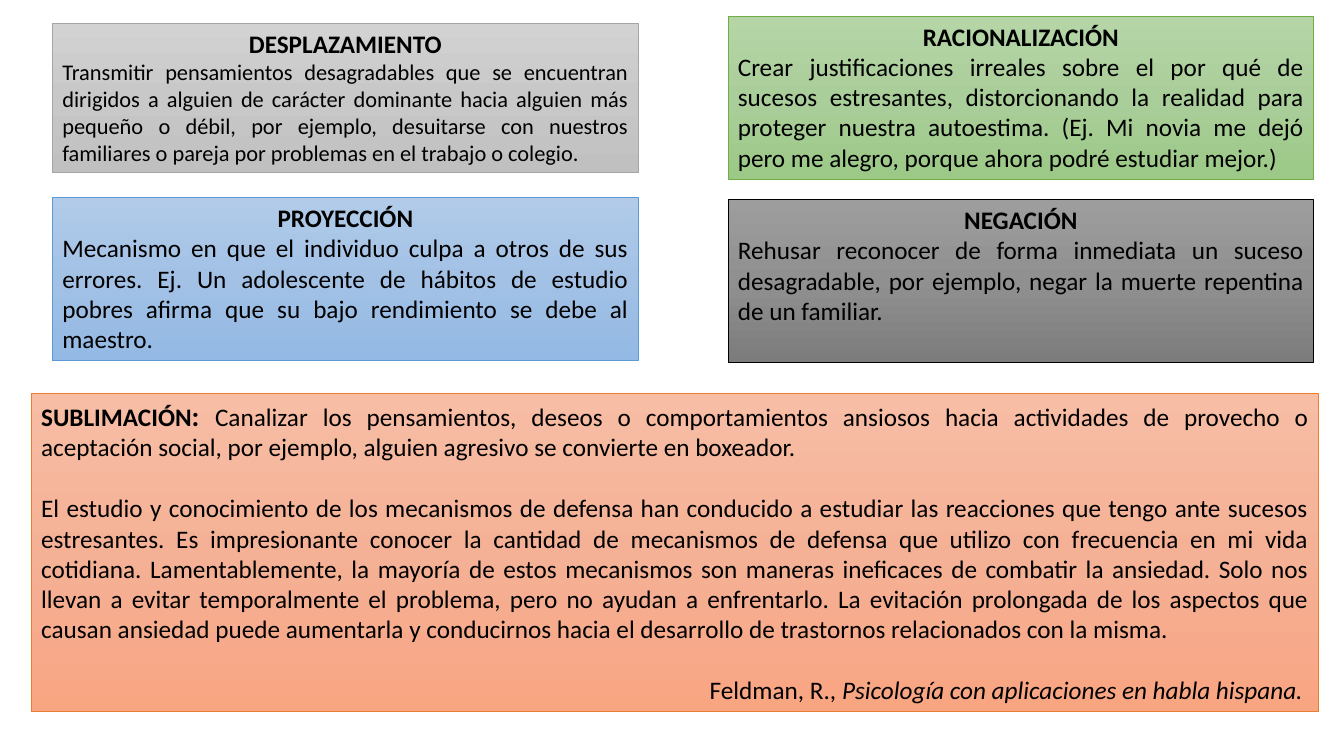
from copy import deepcopy

from pptx import Presentation
from pptx.dml.color import RGBColor
from pptx.enum.shapes import MSO_SHAPE
from pptx.enum.text import MSO_ANCHOR, MSO_AUTO_SIZE, PP_ALIGN
from pptx.oxml.ns import qn
from pptx.util import Inches, Pt

FONT = "Calibri"
TEXT_SIZE = 18
BLOCK_GAP = 22
CARD_WIDTH = 5.81
LEFT_COLUMN, RIGHT_COLUMN = 0.52, 7.22

# Each palette: gradient top, middle and bottom, then the outline
COLORS = {
    "text": "000000",
    "silver": ("D2D2D2", "C8C8C8", "C0C0C0", "A5A5A5"),
    "green": ("B5D5A7", "AACE9A", "9CC987", "70AD47"),
    "gray": ("9D9D9D", "909090", "7C7C7C", "000000"),
    "blue": ("B1CBE9", "A3C1E5", "93B9E4", "5B9BD5"),
    "orange": ("F7BDA5", "F5B196", "F8A582", "ED7D31"),
}

# heading, description, description size, palette, left, top, height
MECHANISMS = [
    ("DESPLAZAMIENTO",
     "Transmitir pensamientos desagradables que se encuentran dirigidos a alguien de "
     "carácter dominante hacia alguien más pequeño o débil, por ejemplo, desuitarse con "
     "nuestros familiares o pareja por problemas en el trabajo o colegio.",
     16, "silver", LEFT_COLUMN, 0.23, 1.48),
    ("RACIONALIZACIÓN",
     "Crear justificaciones irreales sobre el por qué de sucesos estresantes, "
     "distorcionando la realidad para proteger nuestra autoestima. (Ej. Mi novia me dejó "
     "pero me alegro, porque ahora podré estudiar mejor.)",
     TEXT_SIZE, "green", RIGHT_COLUMN, 0.16, 1.62),
    ("NEGACIÓN",
     "Rehusar reconocer de forma inmediata un suceso desagradable, por ejemplo, negar la "
     "muerte repentina de un familiar.",
     TEXT_SIZE, "gray", RIGHT_COLUMN, 1.98, 1.62),
    ("PROYECCIÓN",
     "Mecanismo en que el individuo culpa a otros de sus errores. Ej. Un adolescente de "
     "hábitos de estudio pobres afirma que su bajo rendimiento se debe al maestro.",
     TEXT_SIZE, "blue", LEFT_COLUMN, 1.96, 1.62),
]

SUBLIMATION = (
    "Canalizar los pensamientos, deseos o comportamientos ansiosos hacia actividades de "
    "provecho o aceptación social, por ejemplo, alguien agresivo se convierte en boxeador."
)
REFLECTION = (
    "El estudio y conocimiento de los mecanismos de defensa han conducido a estudiar las "
    "reacciones que tengo ante sucesos estresantes. Es impresionante conocer la cantidad de "
    "mecanismos de defensa que utilizo con frecuencia en mi vida cotidiana. Lamentablemente, "
    "la mayoría de estos mecanismos son maneras ineficaces de combatir la ansiedad. Solo nos "
    "llevan a evitar temporalmente el problema, pero no ayudan a enfrentarlo. La evitación "
    "prolongada de los aspectos que causan ansiedad puede aumentarla y conducirnos hacia el "
    "desarrollo de trastornos relacionados con la misma."
)
SOURCE_AUTHOR = "Feldman, R., "
SOURCE_TITLE = "Psicología con aplicaciones en habla hispana. "


def add_panel(slide, palette, left, top, width, height):
    """Add a gradient rectangle and return its empty text frame."""
    panel = slide.shapes.add_shape(
        MSO_SHAPE.RECTANGLE, Inches(left), Inches(top), Inches(width), Inches(height))
    panel.shadow.inherit = False
    *shades, outline = COLORS[palette]
    panel.fill.gradient()
    panel.fill.gradient_angle = 270
    stop_list = panel._element.spPr.find(qn("a:gradFill")).find(qn("a:gsLst"))
    stop_list.insert(1, deepcopy(stop_list[0]))
    for stop, shade, position in zip(panel.fill.gradient_stops, shades, (0, 0.5, 1)):
        stop.color.rgb = RGBColor.from_string(shade)
        stop.position = position
    panel.line.color.rgb = RGBColor.from_string(outline)
    panel.line.width = Pt(0.5)
    frame = panel.text_frame
    frame.word_wrap = True
    frame.auto_size = MSO_AUTO_SIZE.NONE
    frame.vertical_anchor = MSO_ANCHOR.TOP
    return frame


def add_text(paragraph, text, size=TEXT_SIZE, bold=False, italic=False,
             align=PP_ALIGN.JUSTIFY, before=None):
    paragraph.alignment = align
    if before is not None:
        paragraph.space_before = Pt(before)
    run = paragraph.add_run()
    run.text = text
    run.font.name = FONT
    run.font.size = Pt(size)
    run.font.bold = bold
    run.font.italic = italic
    run.font.color.rgb = RGBColor.from_string(COLORS["text"])


def main():
    deck = Presentation()
    deck.slide_width, deck.slide_height = Inches(13.33), Inches(7.5)
    slide = deck.slides.add_slide(deck.slide_layouts[6])

    for heading, description, size, palette, left, top, height in MECHANISMS:
        card = add_panel(slide, palette, left, top, CARD_WIDTH, height)
        add_text(card.paragraphs[0], heading, bold=True, align=PP_ALIGN.CENTER)
        add_text(card.add_paragraph(), description, size=size)

    conclusion = add_panel(slide, "orange", 0.31, 3.9, 12.77, 3.16)
    definition = conclusion.paragraphs[0]
    add_text(definition, "SUBLIMACIÓN", bold=True)
    add_text(definition, ": ", size=20, bold=True)
    add_text(definition, SUBLIMATION)
    add_text(conclusion.add_paragraph(), REFLECTION, before=BLOCK_GAP)
    citation = conclusion.add_paragraph()
    add_text(citation, SOURCE_AUTHOR, align=PP_ALIGN.RIGHT, before=BLOCK_GAP)
    add_text(citation, SOURCE_TITLE, italic=True, align=PP_ALIGN.RIGHT)

    deck.save("out.pptx")


if __name__ == "__main__":
    main()
